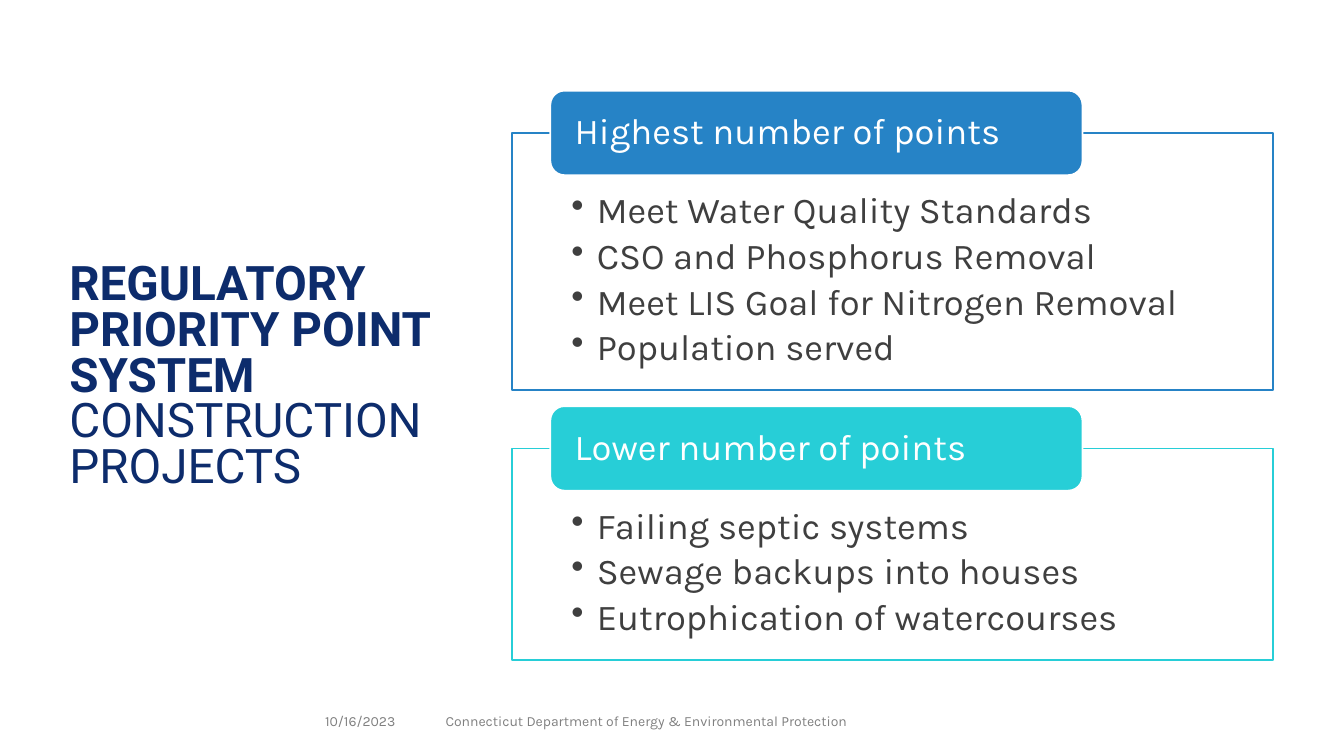
from dataclasses import dataclass

from lxml import etree
from pptx import Presentation
from pptx.dml.color import RGBColor
from pptx.enum import shapes, text
from pptx.oxml import ns
from pptx.util import Cm, Pt

# Content
TITLE = [("REGULATORY PRIORITY POINT SYSTEM", True), ("CONSTRUCTION PROJECTS", False)]
DATE = "10/16/2023"
FOOTER = "Connecticut Department of Energy & Environmental Protection"
# Heading, accent colour, panel height in cm, bullets
PANELS = [
    ("Highest number of points", "2683C6", 6.48, [
        "Meet Water Quality Standards",
        "CSO and Phosphorus Removal",
        "Meet LIS Goal for Nitrogen Removal",
        "Population served",
    ]),
    ("Lower number of points", "27CED7", 5.33, [
        "Failing septic systems",
        "Sewage backups into houses",
        "Eutrophication of watercourses",
    ]),
]


@dataclass(frozen=True)
class Theme:
    title_font: str = "Roboto"
    body_font: str = "Karla"
    navy: str = "0D2C6C"
    ink: str = "3F3F3F"
    grey: str = "808080"
    white: str = "FFFFFF"
    title_size: float = 34
    body_size: float = 26
    footer_size: float = 10
    line_width: float = 1.25


THEME = Theme()
PANEL_LEFT, PANEL_WIDTH, FIRST_TOP, PANEL_GAP = 12.9, 19.18, 3.35, 1.47
TAB_INDENT, TAB_WIDTH, TAB_HEIGHT = 0.97, 13.41, 2.13
FOOTER_TOP, FOOTER_HEIGHT = 17.65, 1.02


# Helpers
def set_frame(shape, insets, anchor=text.MSO_ANCHOR.MIDDLE):
    frame = shape.text_frame
    frame.word_wrap = True
    frame.vertical_anchor = anchor
    frame.margin_left, frame.margin_top, frame.margin_right, frame.margin_bottom = map(Cm, insets)
    return frame


def add_span(para, words, size, colour, font=THEME.body_font, bold=False):
    span = para.add_run()
    span.text = words
    span.font.name, span.font.size, span.font.bold = font, Pt(size), bold
    span.font.color.rgb = RGBColor.from_string(colour)


def add_box(page, left, top, width, height, insets=(0, 0, 0, 0)):
    box = page.shapes.add_textbox(Cm(left), Cm(top), Cm(width), Cm(height))
    return set_frame(box, insets).paragraphs[0]


def add_block(page, kind, place, fill, line):
    block = page.shapes.add_shape(kind, *map(Cm, place))
    block.shadow.inherit = False
    block.fill.solid()
    block.fill.fore_color.rgb = RGBColor.from_string(fill)
    block.line.color.rgb = RGBColor.from_string(line)
    block.line.width = Pt(THEME.line_width)
    return block


def set_bullet(para):
    props = para._p.get_or_add_pPr()
    props.set("marL", str(Cm(0.64)))
    props.set("indent", str(Cm(-0.64)))
    etree.SubElement(props, ns.qn("a:buChar")).set("char", "•")


def add_panel(page, top, heading, accent, height, bullets):
    # Outlined panel with its bullet list
    panel = add_block(page, shapes.MSO_SHAPE.RECTANGLE,
                      (PANEL_LEFT, top, PANEL_WIDTH, height), THEME.white, accent)
    white = panel.fill._xPr.find(ns.qn("a:solidFill"))[0]
    etree.SubElement(white, ns.qn("a:alpha")).set("val", "90000")
    frame = set_frame(panel, (1.5, 1.5, 1.5, 0.51), text.MSO_ANCHOR.TOP)
    for index, words in enumerate(bullets):
        para = frame.add_paragraph() if index else frame.paragraphs[0]
        set_bullet(para)
        para.level = 1
        para.alignment = text.PP_ALIGN.LEFT
        para.line_spacing = 0.9
        para.space_after = Pt(4.5)
        add_span(para, words, THEME.body_size, THEME.ink)

    # Heading tab centred on the panel's top edge
    tab = add_block(page, shapes.MSO_SHAPE.ROUNDED_RECTANGLE,
                    (PANEL_LEFT + TAB_INDENT, top - TAB_HEIGHT / 2, TAB_WIDTH, TAB_HEIGHT),
                    accent, THEME.white)
    para = set_frame(tab, (0.51, 0, 0.51, 0)).paragraphs[0]
    para.alignment = text.PP_ALIGN.LEFT
    para.line_spacing = 0.9
    add_span(para, heading, THEME.body_size, THEME.white)


def main():
    deck = Presentation()
    deck.slide_width, deck.slide_height = Cm(33.87), Cm(19.05)
    page = deck.slides.add_slide(deck.slide_layouts[6])

    # Title
    para = add_box(page, 1.75, 1.78, 9.5, 15.52)
    para.line_spacing = 0.8
    for index, (words, bold) in enumerate(TITLE):
        if index:
            para.add_line_break()
        add_span(para, words, THEME.title_size, THEME.navy, THEME.title_font, bold)

    # Date and footer
    para = add_box(page, 2.34, FOOTER_TOP, 7.62, FOOTER_HEIGHT)
    para.alignment = text.PP_ALIGN.RIGHT
    para.space_after = Pt(6)
    add_span(para, DATE, THEME.footer_size, THEME.grey)
    para = add_box(page, 11.23, FOOTER_TOP, 11.43, FOOTER_HEIGHT, (0, 0.13, 0, 0.13))
    para.space_after = Pt(6)
    add_span(para, FOOTER, THEME.footer_size, THEME.grey)

    # Panels stacked with an equal gap
    top = FIRST_TOP
    for heading, accent, height, bullets in PANELS:
        add_panel(page, top, heading, accent, height, bullets)
        top += height + PANEL_GAP

    deck.save("out.pptx")


if __name__ == "__main__":
    main()
